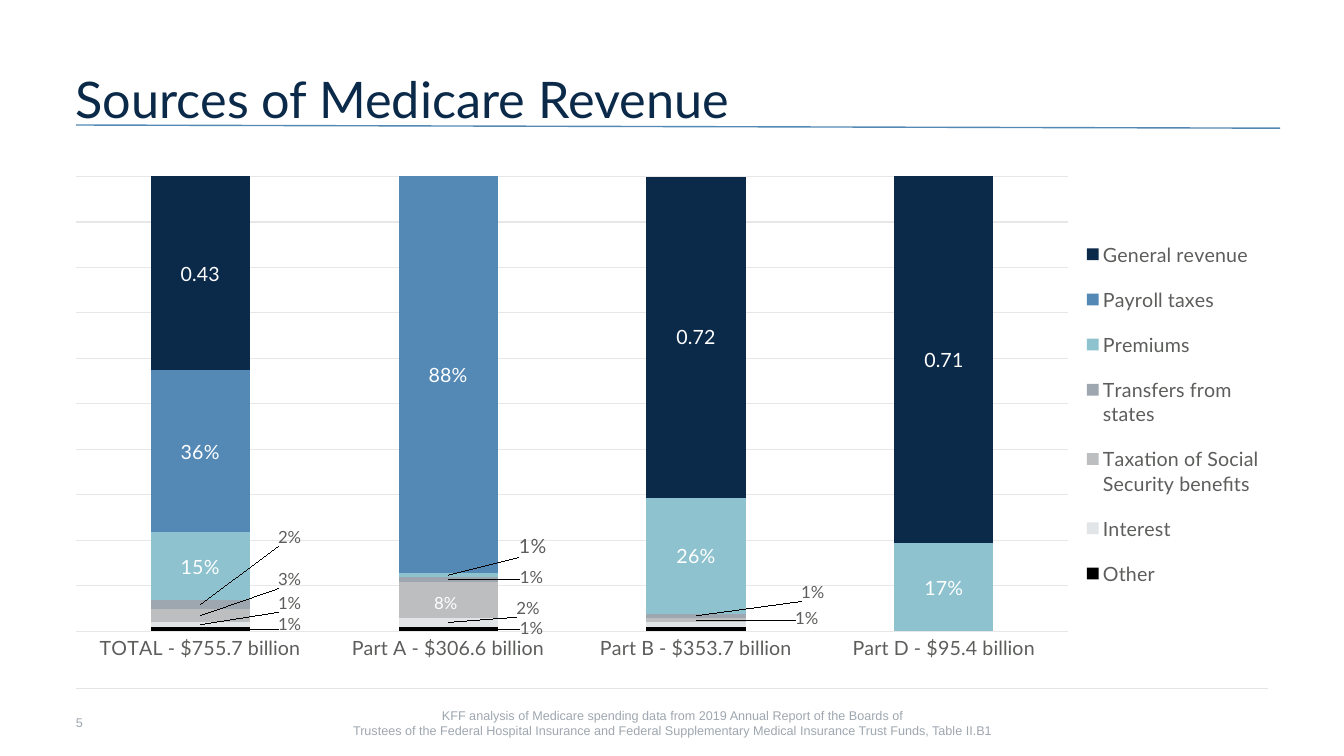
from lxml import etree
from pptx import Presentation
from pptx.chart.data import CategoryChartData
from pptx.dml.color import RGBColor
from pptx.enum import chart as ch, shapes, text
from pptx.oxml import ns
from pptx.util import Cm, Pt

NAVY = RGBColor(0x0B, 0x29, 0x49)
BLUE = RGBColor(0x54, 0x89, 0xB6)
TEAL = RGBColor(0x8D, 0xC2, 0xCE)
STEEL = RGBColor(0x9E, 0xA7, 0xB0)
SILVER = RGBColor(0xBC, 0xBE, 0xC0)
PALE = RGBColor(0xE1, 0xE5, 0xE8)
GRID = RGBColor(0xE6, 0xE7, 0xE6)
GRAY = RGBColor(0x5C, 0x5E, 0x5B)
BLACK = RGBColor(0, 0, 0)
WHITE = RGBColor(0xFF, 0xFF, 0xFF)

# Content
TITLE = "Sources of Medicare Revenue"
SOURCE = [
    "KFF analysis of Medicare spending data from 2019 Annual Report of the Boards of",
    "Trustees of the Federal Hospital Insurance and Federal Supplementary Medical "
    "Insurance Trust Funds, Table II.B1",
]
PAGE = "5"
CATEGORIES = ["TOTAL - $755.7 billion", "Part A - $306.6 billion",
              "Part B - $353.7 billion", "Part D - $95.4 billion"]
# name, values, fill, label size, label colour, label format
SERIES = [
    ("Other", (0.01, 0.01, 0.01, None), BLACK, 12, GRAY, "0%"),
    ("Interest", (0.01, 0.02, 0.01, None), PALE, 12, GRAY, "0%"),
    ("Taxation of Social Security benefits", (0.03, 0.08, 0.01, None), SILVER, 12, GRAY, "0%"),
    ("Transfers from states", (0.02, 0.01, 0.01, None), STEEL, 12, GRAY, "0%"),
    ("Premiums", (0.15, 0.01, 0.26, 0.17), TEAL, 14, WHITE, "0%"),
    ("Payroll taxes", (0.36, 0.88, None, None), BLUE, 14, WHITE, "0%"),
    ("General revenue", (0.43, None, 0.72, 0.71), NAVY, 14, WHITE, "General"),
]
# series -> {category: (label shift x, shift y, colour)}, None hides the label
MOVED = {
    "Other": {0: (0.075, -0.011, GRAY), 1: (0.07, -0.003, GRAY), 2: None},
    "Interest": {0: (0.075, -0.044, GRAY), 1: (0.067, -0.03, GRAY), 2: None},
    "Taxation of Social Security benefits": {
        0: (0.075, -0.073, GRAY), 1: (-0.002, 0.005, WHITE), 2: (0.093, -0.006, GRAY)},
    "Transfers from states": {
        0: (0.075, -0.134, GRAY), 1: (0.07, -0.006, GRAY), 2: (0.098, -0.048, GRAY)},
    "Premiums": {1: (0.071, -0.059, GRAY)},
}
LEFT, WIDTH = 1.91, 30.05


def set_font(font, size, color, name="Lato"):
    font.size, font.name, font.color.rgb = Pt(size), name, color


def add_text(s, box, lines, size, color, name, anchor, align):
    tf = s.shapes.add_textbox(*map(Cm, box)).text_frame
    tf.word_wrap = True
    tf.vertical_anchor = anchor
    tf.margin_left = tf.margin_right = tf.margin_top = tf.margin_bottom = 0
    for i, line in enumerate(lines):
        p = tf.add_paragraph() if i else tf.paragraphs[0]
        p.text, p.alignment = line, align
        set_font(p.font, size, color, name)
    return tf


def add_line(s, ends, color, width):
    line = s.shapes.add_connector(shapes.MSO_CONNECTOR.STRAIGHT, *map(Cm, ends))
    line.line.color.rgb, line.line.width = color, Pt(width)
    etree.SubElement(line._element.spPr, ns.qn("a:effectLst"))


def make(tag, val=None, parent=None):
    el = etree.Element(ns.qn(tag)) if parent is None else etree.SubElement(parent, ns.qn(tag))
    if val is not None:
        el.set("val", str(val))
    return el


def layout(**values):
    el = make("c:layout")
    manual = make("c:manualLayout", parent=el)
    for tag, val in values.items():
        make("c:" + tag, val, manual)
    return el


def move_label(ser, idx, shift, size, fmt):
    label = ser.points[idx].data_label
    set_font(label.font, size, shift[2] if shift else GRAY)
    label.position = ch.XL_LABEL_POSITION.CENTER
    dl = ser._element.xpath(f'c:dLbls/c:dLbl[c:idx/@val="{idx}"]')[0]
    if shift is None:
        for child in list(dl)[1:]:
            dl.remove(child)
        make("c:delete", 1, dl)
        return
    dl.insert(1, layout(x=shift[0], y=shift[1]))
    num = make("c:numFmt")
    num.set("formatCode", fmt)
    num.set("sourceLinked", "0")
    dl.insert(2, num)


def add_revenue_chart(s):
    data = CategoryChartData()
    data.categories = CATEGORIES
    for name, values, *_ in SERIES:
        data.add_series(name, values)
    chart = s.shapes.add_chart(ch.XL_CHART_TYPE.COLUMN_STACKED_100, Cm(LEFT), Cm(4.04),
                               Cm(WIDTH), Cm(12.78), data).chart
    set_font(chart.font, 10, GRAY)
    chart.has_title = False

    # Axes
    cat, val = chart.category_axis, chart.value_axis
    cat.major_tick_mark = ch.XL_TICK_MARK.NONE
    set_font(cat.tick_labels.font, 14, GRAY)
    val.visible = False
    val.has_major_gridlines = True
    val.minimum_scale, val.maximum_scale, val.major_unit = 0, 1, 0.1
    val.tick_labels.number_format = "0%"
    val.tick_labels.number_format_is_linked = False
    for line in (cat.format.line, val.major_gridlines.format.line):
        line.color.rgb, line.width = GRID, Pt(0.75)

    # Legend and plot area
    chart.has_legend = True
    chart.legend.position = ch.XL_LEGEND_POSITION.RIGHT
    chart.legend.include_in_layout = False
    set_font(chart.legend.font, 14, GRAY)
    legend, area = chart.legend._element, chart._chartSpace.chart.plotArea
    for el in (legend, area):
        for old in el.findall(ns.qn("c:layout")):
            el.remove(old)
    legend.insert(1, layout(xMode="edge", yMode="edge", x=0.84, y=0.12, w=0.16, h=0.76))
    area.insert(0, layout(layoutTarget="inner", xMode="edge", yMode="edge",
                          x=0, y=0.032, w=0.832, h=0.897))

    # Series and labels
    plot = chart.plots[0]
    plot.gap_width, plot.overlap, plot.vary_by_categories = 150, 100, False
    for ser, (name, _, fill, size, color, fmt) in zip(plot.series, SERIES):
        ser.format.fill.solid()
        ser.format.fill.fore_color.rgb = fill
        ser.invert_if_negative = False
        labels = ser.data_labels
        labels.show_value = True
        labels.number_format, labels.number_format_is_linked = fmt, False
        labels.position = ch.XL_LABEL_POSITION.CENTER
        set_font(labels.font, size, color)
        for idx, shift in MOVED.get(name, {}).items():
            move_label(ser, idx, shift, size, fmt)


def main():
    prs = Presentation()
    prs.slide_width, prs.slide_height = Cm(33.87), Cm(19.05)
    s = prs.slides.add_slide(prs.slide_layouts[6])
    top, bottom = text.MSO_ANCHOR.TOP, text.MSO_ANCHOR.BOTTOM
    left, center = text.PP_ALIGN.LEFT, text.PP_ALIGN.CENTER

    # Footer rule, title and footer
    add_line(s, (LEFT + WIDTH, 17.35, LEFT, 17.35), PALE, 0.5)
    tf = add_text(s, (LEFT, 1.88, WIDTH, 2.54), [TITLE], 36, NAVY, "Lato", top, left)
    tf.paragraphs[0].line_spacing = 0.9
    add_text(s, (8.26, 17.81, 17.37, 0.79), SOURCE, 9, STEEL, "Arial", bottom, center)
    add_text(s, (LEFT, 18.01, 0.76, 0.38), [PAGE], 9, STEEL, "Arial", bottom, left)

    # Chart and title rule
    add_revenue_chart(s)
    add_line(s, (LEFT, 3.15, 32.26, 3.23), BLUE, 1)
    prs.save("out.pptx")


if __name__ == "__main__":
    main()
